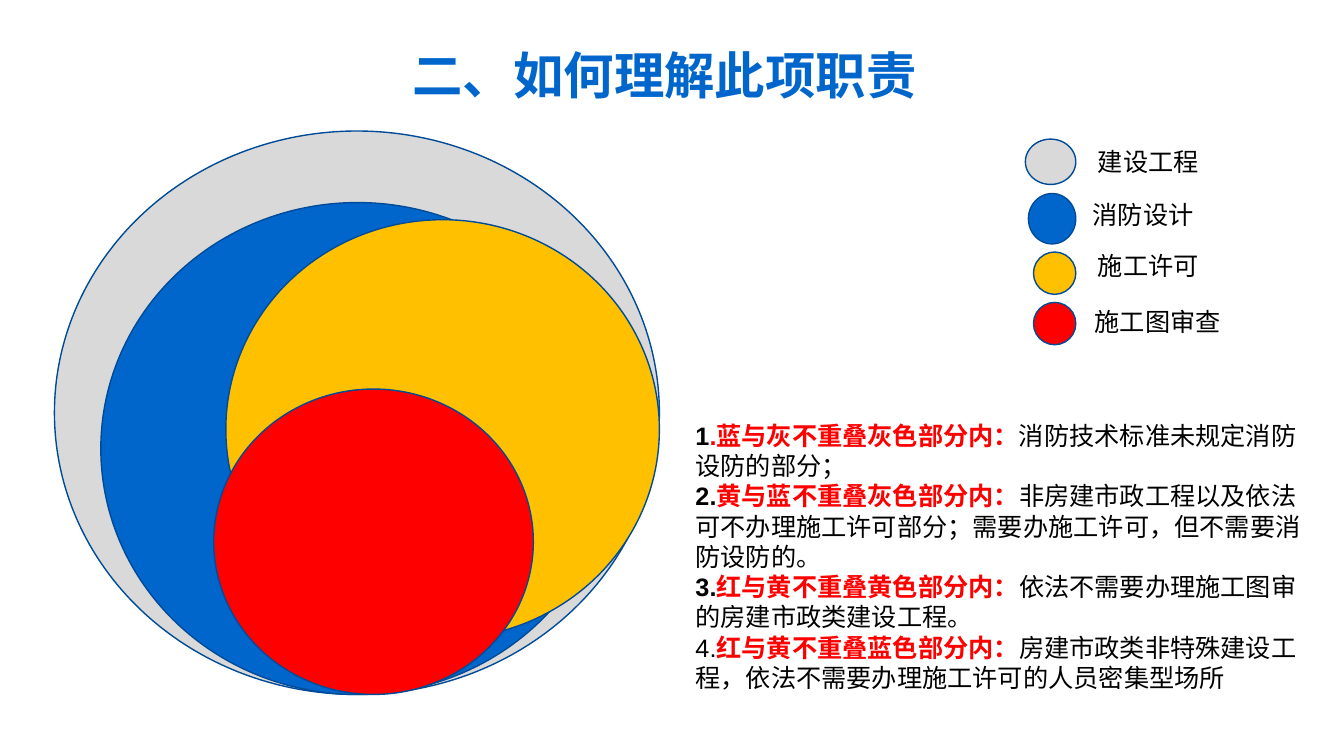
from dataclasses import dataclass

from pptx import Presentation
from pptx.dml.color import RGBColor
from pptx.enum.lang import MSO_LANGUAGE_ID
from pptx.enum.shapes import MSO_SHAPE
from pptx.enum.text import MSO_ANCHOR, MSO_AUTO_SIZE, PP_ALIGN
from pptx.util import Inches, Pt


@dataclass(frozen=True)
class Theme:
    font: str = "Arial"
    title_size: int = 36
    body_size: int = 18
    outline_width: int = 1
    black: str = "000000"
    outline: str = "004B97"
    gray: str = "D9D9D9"
    blue: str = "0066CC"
    yellow: str = "FFC000"
    red: str = "FF0000"


THEME = Theme()

# Circle boxes and label offsets are relative to their region, in inches
SCOPES = [
    (THEME.gray, (0, 0, 6, 5.59)),
    (THEME.blue, (0.46, 0.71, 5.09, 4.88)),
    (THEME.yellow, (1.7, 0.88, 4.3, 4.16)),
    (THEME.red, (1.58, 2.56, 3.17, 3.03)),
]
LEGEND = [
    ("建设工程", THEME.gray, (0, 0, 0.5, 0.45), (0.62, 0.02, 1.44)),
    ("消防设计", THEME.blue, (0.03, 0.54, 0.47, 0.5), (0.57, 0.55, 1.44)),
    ("施工许可", THEME.yellow, (0.08, 1.12, 0.42, 0.42), (0.62, 1.05, 1.28)),
    ("施工图审查", THEME.red, (0.08, 1.62, 0.42, 0.42), (0.59, 1.61, 1.66)),
]
# Each note: black number, whether it is bold, red heading, explanation
NOTES = [
    ("1", True, ".蓝与灰不重叠灰色部分内：", "消防技术标准未规定消防设防的部分；"),
    ("2.", True, "黄与蓝不重叠灰色部分内：",
     "非房建市政工程以及依法可不办理施工许可部分；需要办施工许可，但不需要消防设防的。"),
    ("3.", True, "红与黄不重叠黄色部分内：", "依法不需要办理施工图审的房建市政类建设工程。"),
    ("4.", False, "红与黄不重叠蓝色部分内：",
     "房建市政类非特殊建设工程，依法不需要办理施工许可的人员密集型场所"),
]


def format_run(run, size=THEME.body_size, color=THEME.black, bold=False):
    run.font.name = THEME.font
    run.font.size = Pt(size)
    run.font.bold = bold
    run.font.color.rgb = RGBColor.from_string(color)
    run.font.language_id = MSO_LANGUAGE_ID.SIMPLIFIED_CHINESE


def add_circle(slide, left, top, width, height, color):
    circle = slide.shapes.add_shape(
        MSO_SHAPE.OVAL, Inches(left), Inches(top), Inches(width), Inches(height))
    circle.shadow.inherit = False
    circle.fill.solid()
    circle.fill.fore_color.rgb = RGBColor.from_string(color)
    circle.line.color.rgb = RGBColor.from_string(THEME.outline)
    circle.line.width = Pt(THEME.outline_width)


def add_text_frame(slide, left, top, width, height):
    frame = slide.shapes.add_textbox(
        Inches(left), Inches(top), Inches(width), Inches(height)).text_frame
    frame.word_wrap = True
    frame.auto_size = MSO_AUTO_SIZE.SHAPE_TO_FIT_TEXT
    return frame


def place_title(slide, left, top, width, height):
    title = slide.shapes.title
    title.left, title.top = Inches(left), Inches(top)
    title.width, title.height = Inches(width), Inches(height)
    frame = title.text_frame
    frame.text = "二、如何理解此项职责"
    frame.vertical_anchor = MSO_ANCHOR.MIDDLE
    frame.auto_size = MSO_AUTO_SIZE.NONE
    heading = frame.paragraphs[0]
    heading.alignment = PP_ALIGN.CENTER
    format_run(heading.runs[0], THEME.title_size, THEME.blue, True)


def place_scopes(slide, left, top):
    for color, (dx, dy, width, height) in SCOPES:
        add_circle(slide, left + dx, top + dy, width, height, color)


def place_legend(slide, left, top):
    for name, color, (dx, dy, width, height), (label_dx, label_dy, label_width) in LEGEND:
        add_circle(slide, left + dx, top + dy, width, height, color)
        label = add_text_frame(slide, left + label_dx, top + label_dy, label_width, 0.4)
        label.text = name
        format_run(label.paragraphs[0].runs[0])


def place_notes(slide, left, top, width, height):
    frame = add_text_frame(slide, left, top, width, height)
    for index, (number, number_bold, heading, explanation) in enumerate(NOTES):
        note = frame.add_paragraph() if index else frame.paragraphs[0]
        for text, color, bold in (
            (number, THEME.black, number_bold),
            (heading, THEME.red, True),
            (explanation, THEME.black, False),
        ):
            run = note.add_run()
            run.text = text
            format_run(run, color=color, bold=bold)


def main():
    deck = Presentation()
    deck.slide_width, deck.slide_height = Inches(13.33), Inches(7.5)
    slide = deck.slides.add_slide(deck.slide_layouts[5])
    place_title(slide, 0.59, 0.42, 12, 0.64)
    place_scopes(slide, 0.54, 1.3)
    place_legend(slide, 10.17, 1.38)
    place_notes(slide, 6.8, 4.12, 6.3, 2.83)
    deck.save("out.pptx")


if __name__ == "__main__":
    main()
